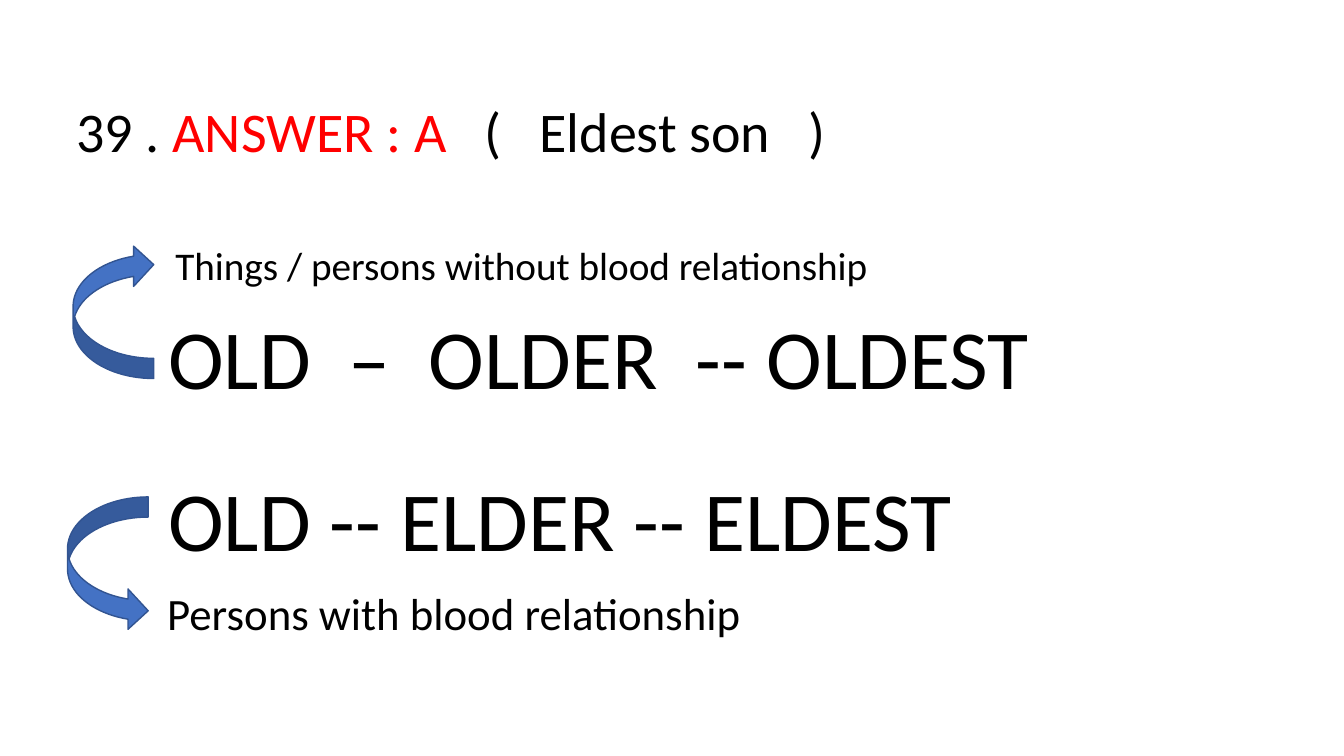
from dataclasses import dataclass

from pptx import Presentation
from pptx.dml.color import RGBColor
from pptx.enum.shapes import MSO_SHAPE
from pptx.enum.text import MSO_AUTO_SIZE
from pptx.util import Inches, Pt


@dataclass(frozen=True)
class Theme:
    font: str = "Calibri"
    ink: str = "000000"
    answer: str = "FF0000"
    arrow: str = "4472C4"
    arrow_line: str = "325491"
    title: int = 40
    degrees: int = 60
    things: int = 28
    persons: int = 32
    space_em: float = 0.226


THEME = Theme()


def add_text(s, box, text, *, size, color=THEME.ink, wrap=False):
    tf = s.shapes.add_textbox(*map(Inches, box)).text_frame
    tf.word_wrap = wrap
    tf.auto_size = MSO_AUTO_SIZE.SHAPE_TO_FIT_TEXT
    p = tf.paragraphs[0]
    add_run(p, text, size=size, color=color)
    return p


def add_run(p, text, *, size, color=THEME.ink, extra_spaces=0):
    r = p.add_run()
    r.text = text
    r.font.name = THEME.font
    r.font.size = Pt(size)
    r.font.color.rgb = RGBColor.from_string(color)
    if extra_spaces:
        spacing = round(extra_spaces * THEME.space_em * size * 100)
        r.font._element.set("spc", str(spacing))


def add_gapped(p, parts, *, size, extra_spaces):
    for text in parts:
        add_run(p, " ", size=size, extra_spaces=extra_spaces)
        add_run(p, text, size=size)


def add_arrow(s, box, kind, rotation=0):
    sp = s.shapes.add_shape(kind, *map(Inches, box))
    sp.rotation = rotation
    sp.shadow.inherit = False
    sp.fill.solid()
    sp.fill.fore_color.rgb = RGBColor.from_string(THEME.arrow)
    sp.line.color.rgb = RGBColor.from_string(THEME.arrow_line)
    sp.line.width = Pt(1)


def add_heading(s, x, y, w, h):
    size = THEME.title
    p = add_text(s, (x, y, w, h), "39 . ", size=size, wrap=True)
    add_run(p, "ANSWER : A", size=size, color=THEME.answer)
    add_gapped(p, ["(", "Eldest son", ")"], size=size, extra_spaces=2)


def add_without_blood(s, x, y, w, h):
    size = THEME.degrees
    p = add_text(s, (x + 1.11, y + 0.64, w - 1.11, 1.11), "OLD", size=size)
    add_gapped(p, ["–", "OLDER", "-- OLDEST"], size=size, extra_spaces=1)
    add_text(s, (x + 1.18, y, 7.15, 0.57),
             "Things / persons without blood relationship", size=THEME.things)
    add_arrow(s, (x, y + 0.35, 1.33, 0.8),
              MSO_SHAPE.CURVED_DOWN_ARROW, rotation=270)


def add_with_blood(s, x, y, w, h):
    add_text(s, (x + 0.9, y, w - 0.9, 1.11),
             "OLD -- ELDER -- ELDEST", size=THEME.degrees)
    add_text(s, (x + 0.89, y + 1.17, 5.95, 0.64),
             "Persons with blood relationship", size=THEME.persons)
    add_arrow(s, (x, y + 0.34, 0.8, 1.33), MSO_SHAPE.CURVED_RIGHT_ARROW)


def main():
    prs = Presentation()
    prs.slide_width = Inches(13.33)
    prs.slide_height = Inches(7.5)
    s = prs.slides.add_slide(prs.slide_layouts[6])
    add_without_blood(s, 0.46, 2.34, 9.93, 1.75)
    add_with_blood(s, 0.67, 4.59, 9.14, 1.81)
    add_heading(s, 0.66, 0.91, 7.65, 0.77)
    prs.save("out.pptx")


if __name__ == "__main__":
    main()
